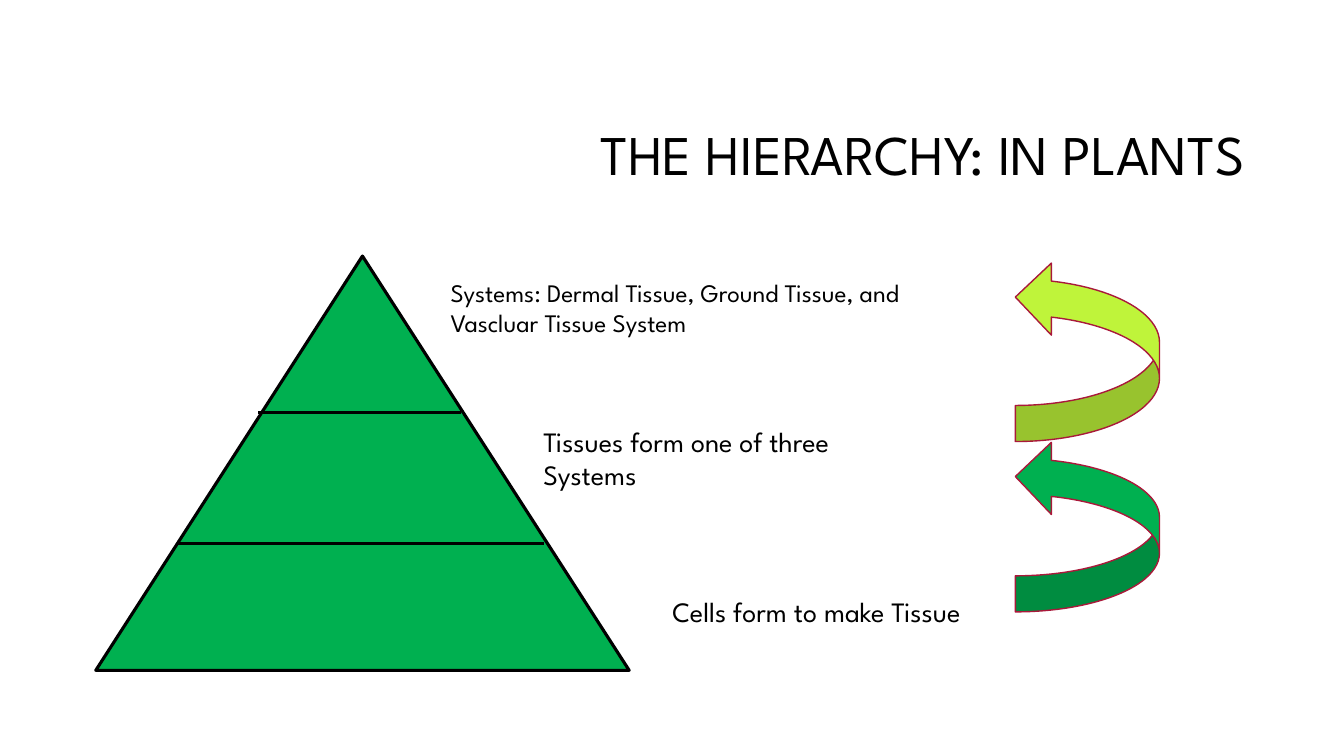
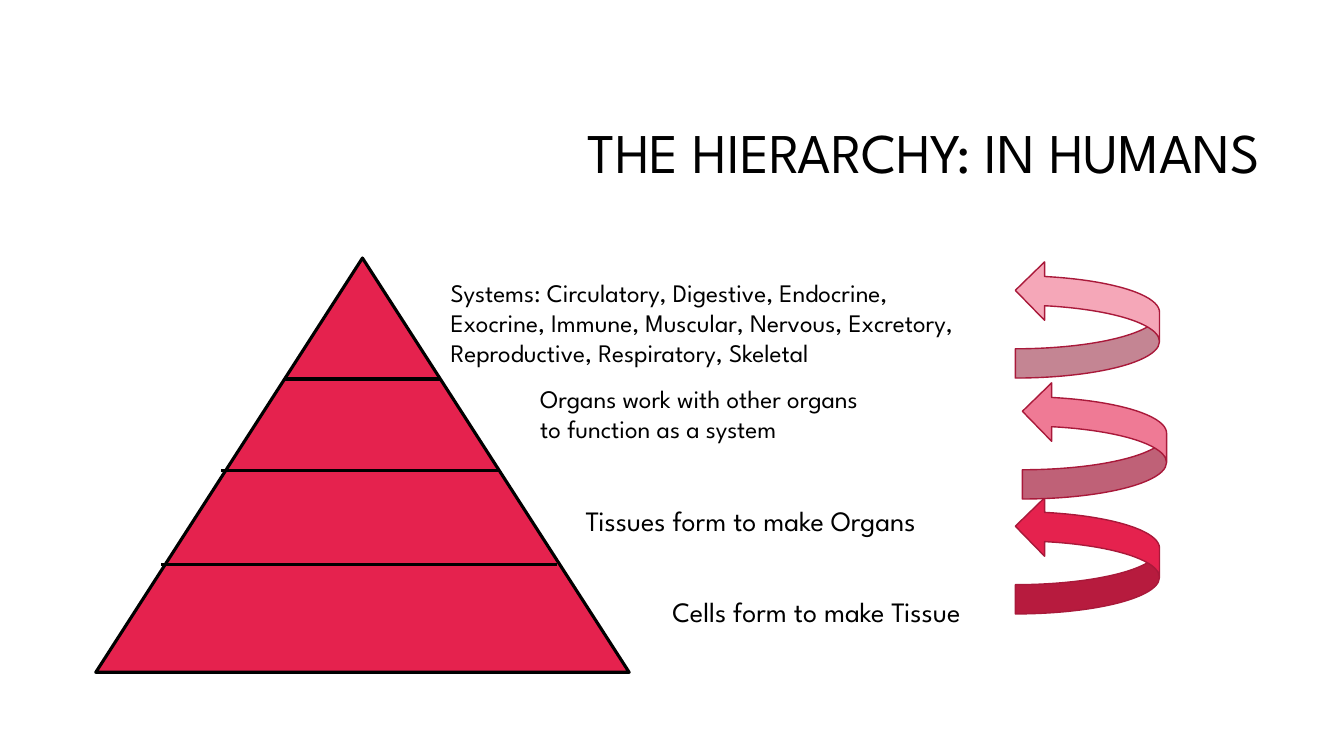
import pptx
import pptx.dml.color
import pptx.enum.shapes
import pptx.enum.text
import pptx.oxml.xmlchemy
import pptx.util
from pptx.util import Inches

SHAPE = pptx.enum.shapes.MSO_SHAPE
ANCHOR = pptx.enum.text.MSO_ANCHOR
ALIGN = pptx.enum.text.PP_ALIGN
AUTO_SIZE = pptx.enum.text.MSO_AUTO_SIZE


def rgb(value):
    return pptx.dml.color.RGBColor.from_string(value)


def apply(target, values):
    for name, value in values.items():
        setattr(target, name, value)


class Deck:
    """Holds the shared style and the slide being drawn."""

    FONT = "League Spartan"
    INK = "000000"
    ARROW_LINE = "A9193A"
    LINE_WIDTH = 2.25

    def __init__(self):
        self.prs = pptx.Presentation()
        apply(self.prs, {"slide_width": Inches(13.33), "slide_height": Inches(7.5)})
        self.s = None

    def new_slide(self):
        self.s = self.prs.slides.add_slide(self.prs.slide_layouts[6])

    def text(self, box, lines, size, frame, paragraph=None):
        tf = self.s.shapes.add_textbox(*map(Inches, box)).text_frame
        apply(tf, frame)
        for i, line in enumerate(lines):
            p = tf.paragraphs[0] if i == 0 else tf.add_paragraph()
            apply(p, paragraph or {})
            r = p.add_run()
            r.text = line
            apply(r.font, {"name": self.FONT, "size": pptx.util.Pt(size)})
            r.font.color.rgb = rgb(self.INK)

    def title(self, left, top, line):
        self.text((left, top, 9.42, 1.41), [line], 40,
                  {"word_wrap": True, "vertical_anchor": ANCHOR.MIDDLE},
                  {"alignment": ALIGN.RIGHT, "line_spacing": 0.9})

    def label(self, box, lines, size, wrap=False):
        self.text(box, lines, size,
                  {"word_wrap": wrap, "auto_size": AUTO_SIZE.SHAPE_TO_FIT_TEXT})

    def shape(self, kind, box, fill, line, width):
        sp = self.s.shapes.add_shape(kind, *map(Inches, box))
        sp.shadow.inherit = False
        sp.fill.solid()
        sp.fill.fore_color.rgb = rgb(fill)
        sp.line.color.rgb = rgb(line)
        sp.line.width = pptx.util.Pt(width)
        return sp

    def divider(self, left, right, y):
        cx = self.s.shapes.add_connector(
            pptx.enum.shapes.MSO_CONNECTOR.STRAIGHT,
            *map(Inches, (left, y, right, y)))
        cx.line.color.rgb = rgb(self.INK)
        cx.line.width = pptx.util.Pt(self.LINE_WIDTH)
        cx._element.spPr.append(pptx.oxml.xmlchemy.OxmlElement("a:effectLst"))

    def pyramid(self, top, fill, dividers):
        self.shape(SHAPE.ISOSCELES_TRIANGLE, (0.95, top, 5.29, 4.11),
                   fill, self.INK, self.LINE_WIDTH)
        for ends in dividers:
            self.divider(*ends)

    def arrow(self, left, top, height, fill):
        sp = self.shape(SHAPE.CURVED_RIGHT_ARROW, (left, top, 1.43, height),
                        fill, self.ARROW_LINE, 1)
        sp.rotation = 180

    def cells_label(self):
        self.label((6.57, 5.85, 3.56, 0.44), ["Cells form to make Tissue"], 20)


def plants(deck):
    deck.new_slide()
    deck.title(3.02, 0.86, "THE HIERARCHY: IN PLANTS")
    deck.pyramid(2.54, "00B050", [(1.76, 5.4, 5.39), (2.56, 4.57, 4.09)])
    deck.cells_label()
    deck.arrow(10.07, 4.37, 1.7, "00B050")
    deck.label((5.29, 4.16, 3.96, 0.77),
               ["Tissues form one of three Systems"], 20, wrap=True)
    deck.arrow(10.07, 2.59, 1.79, "BFF43A")
    deck.label((4.37, 2.7, 5.38, 0.71),
               ["Systems: Dermal Tissue, Ground Tissue, and",
                "Vascluar Tissue System"], 18)


def humans(deck):
    deck.new_slide()
    deck.title(3.17, 0.84, "THE HIERARCHY: IN HUMANS")
    deck.pyramid(2.56, "E5224E", [(1.6, 5.52, 5.6), (2.19, 4.96, 4.67),
                                  (2.82, 4.37, 3.76)])
    deck.cells_label()
    deck.label((5.71, 4.95, 4.03, 0.44), ["Tissues form to make Organs"], 20)
    deck.label((5.26, 3.75, 3.56, 1.01),
               ["Organs work with other organs to function as a system"],
               18, wrap=True)
    deck.label((4.37, 2.7, 6.07, 1.01),
               ["Systems: Circulatory, Digestive, Endocrine,",
                "Exocrine, Immune, Muscular, Nervous, Excretory,",
                "Reproductive, Respiratory, Skeletal"], 18)
    for left, top, fill in [(10.07, 4.93, "E5224E"), (10.14, 3.79, "EF7A95"),
                            (10.07, 2.59, "F5A7B8")]:
        deck.arrow(left, top, 1.16, fill)


def main():
    deck = Deck()
    plants(deck)
    humans(deck)
    deck.prs.save("out.pptx")


if __name__ == "__main__":
    main()
